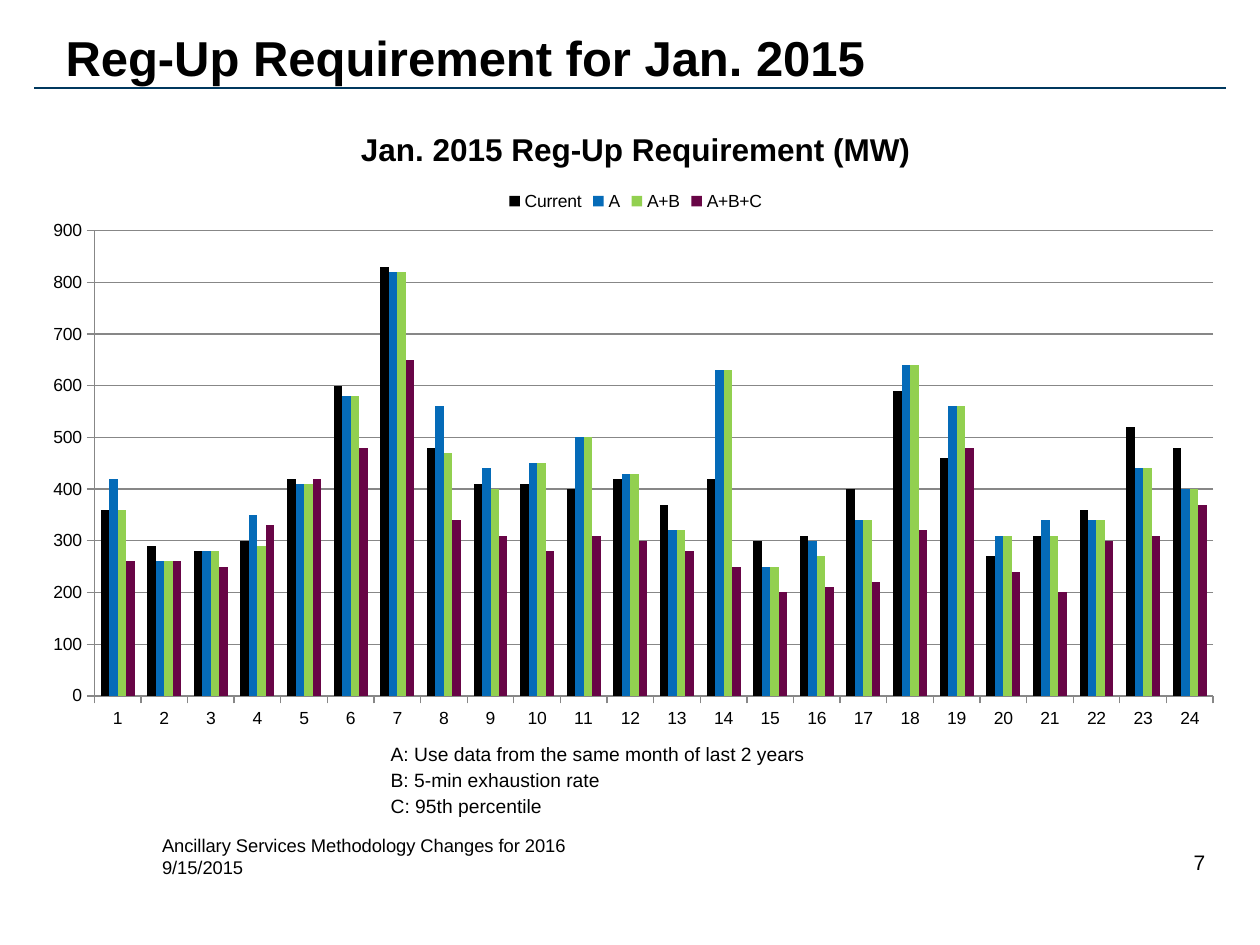
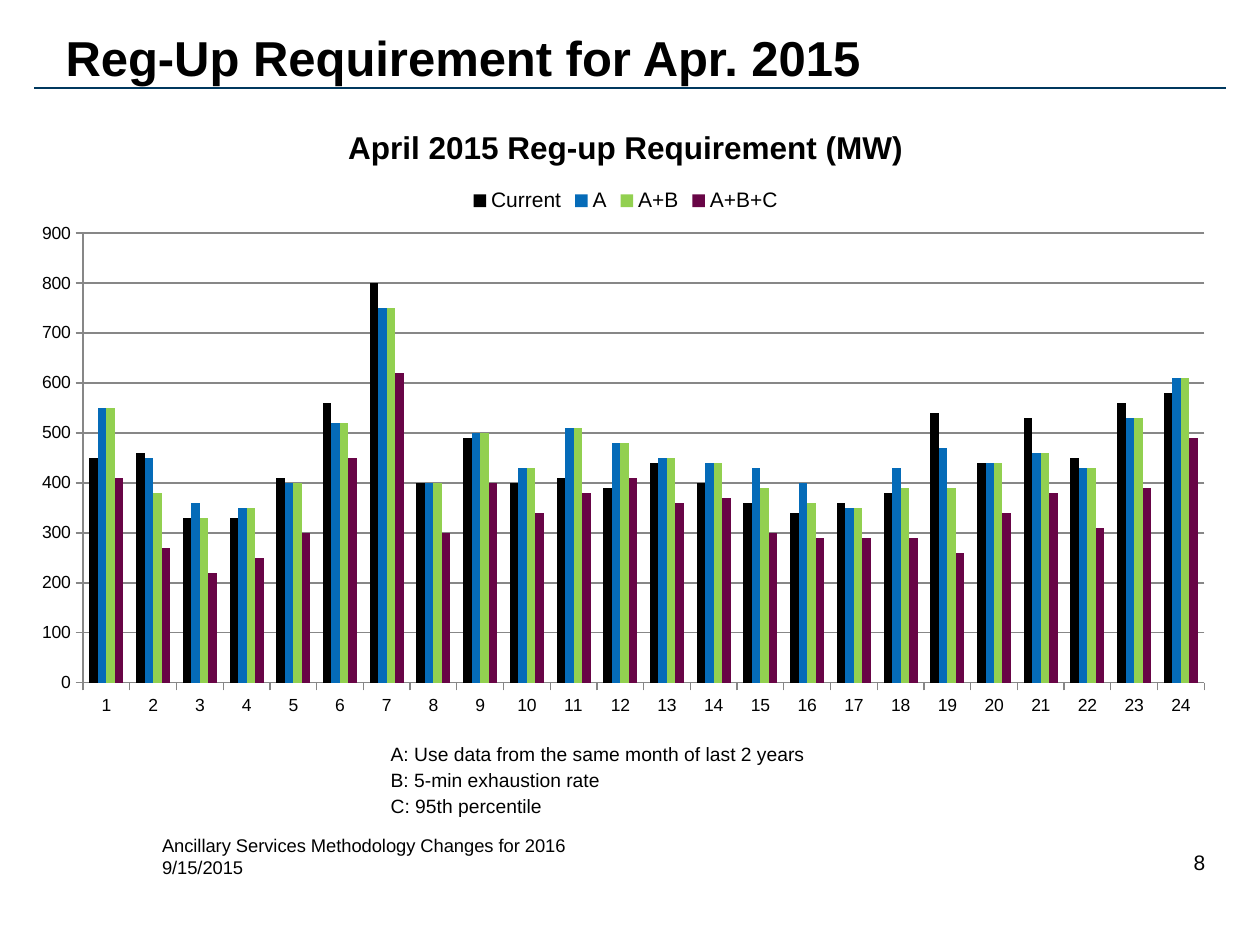
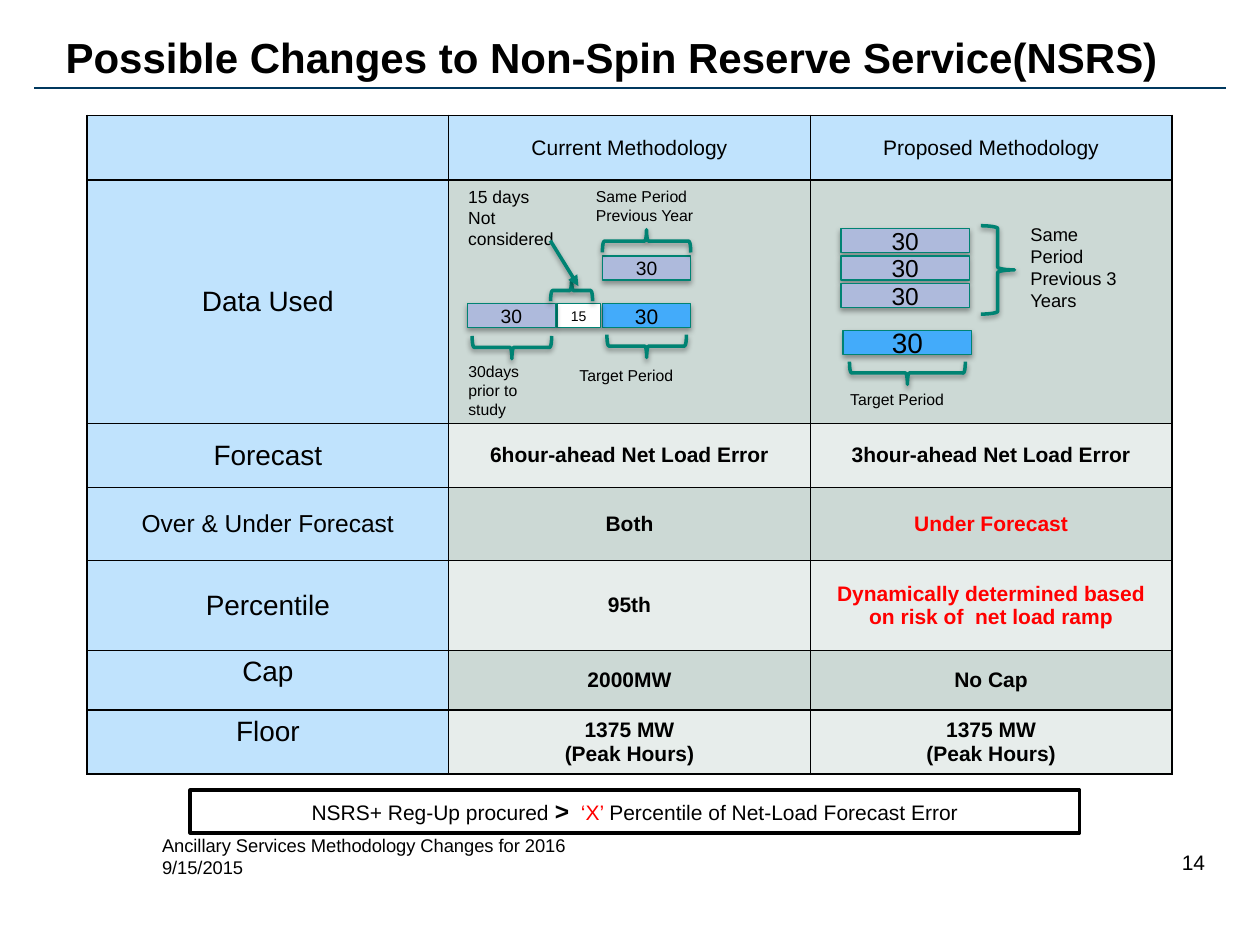
from typing import NamedTuple

from lxml.etree import SubElement
from pptx import Presentation
from pptx.chart.data import CategoryChartData
from pptx.dml.color import RGBColor
from pptx.enum.chart import XL_CHART_TYPE as ChartType
from pptx.enum.chart import XL_LEGEND_POSITION as LegendPosition
from pptx.enum.chart import XL_TICK_MARK as TickMark
from pptx.enum.shapes import MSO_CONNECTOR as Connector
from pptx.enum.shapes import MSO_SHAPE as Preset
from pptx.enum.text import MSO_ANCHOR as Anchor
from pptx.enum.text import MSO_AUTO_SIZE as AutoSize
from pptx.enum.text import PP_ALIGN as Align
from pptx.oxml.ns import qn
from pptx.util import Pt

FONT = "Arial"
COLORS = {
    "ink": "000000",
    "paper": "FFFFFF",
    "rule": "00385E",
    "alert": "FF0000",
    "heading": "C0E3FD",
    "band_dark": "CCD9D5",
    "band_light": "E7EDEB",
    "history": "AEBADC",
    "target": "43ABFA",
    "diagram": "008373",
    "grid": "878787",
    "Current": "000000",
    "A": "056BB8",
    "A+B": "92D050",
    "A+B+C": "680546",
}
FOOTER = "Ancillary Services Methodology Changes for 2016\n9/15/2015"
LEGEND_NOTES = (
    "A: Use data from the same month of last 2 years",
    "B: 5-min exhaustion rate",
    "C: 95th percentile",
)
NOTE_HEIGHT = 14.88


class Box(NamedTuple):
    left: float
    top: float
    width: float
    height: float

    def points(self) -> tuple:
        return tuple(Pt(length) for length in self)


class RequirementSlide(NamedTuple):
    title: str
    number: int
    chart_title: str
    chart_box: Box
    plot: tuple[float, float, float, float]
    legend_size: float
    series: dict[str, list[int]]


class MethodRow(NamedTuple):
    height: float
    label: str
    current: str
    proposed: str
    fill: str
    label_size: float = 16
    label_anchor: Anchor = Anchor.MIDDLE
    proposed_color: str = "ink"
    bold: bool = True


class Caption(NamedTuple):
    text: str
    box: Box
    size: float = 9


class Period(NamedTuple):
    days: str
    box: Box
    fill: str
    size: float


class Brace(NamedTuple):
    box: Box
    rotation: int


REQUIREMENTS = [
    RequirementSlide(
        "Reg-Up Requirement for Jan. 2015", 7, "Jan. 2015 Reg-Up Requirement (MW)",
        Box(19.5, 59, 687.5, 364.25), (0.05, 0.2, 0.93, 0.73), 10,
        {
            "Current": [360, 290, 280, 300, 420, 600, 830, 480, 410, 410, 400, 420,
                        370, 420, 300, 310, 400, 590, 460, 270, 310, 360, 520, 480],
            "A": [420, 260, 280, 350, 410, 580, 820, 560, 440, 450, 500, 430,
                  320, 630, 250, 300, 340, 640, 560, 310, 340, 340, 440, 400],
            "A+B": [360, 260, 280, 290, 410, 580, 820, 470, 400, 450, 500, 430,
                    320, 630, 250, 270, 340, 640, 560, 310, 310, 340, 440, 400],
            "A+B+C": [260, 260, 250, 330, 420, 480, 650, 340, 310, 280, 310, 300,
                      280, 250, 200, 210, 220, 320, 480, 240, 200, 300, 310, 370],
        },
    ),
    RequirementSlide(
        "Reg-Up Requirement for Apr. 2015", 8, "April 2015 Reg-up Requirement (MW)",
        Box(13, 58.25, 689, 357), (0.05, 0.21, 0.93, 0.72), 12,
        {
            "Current": [450, 460, 330, 330, 410, 560, 800, 400, 490, 400, 410, 390,
                        440, 400, 360, 340, 360, 380, 540, 440, 530, 450, 560, 580],
            "A": [550, 450, 360, 350, 400, 520, 750, 400, 500, 430, 510, 480,
                  450, 440, 430, 400, 350, 430, 470, 440, 460, 430, 530, 610],
            "A+B": [550, 380, 330, 350, 400, 520, 750, 400, 500, 430, 510, 480,
                    450, 440, 390, 360, 350, 390, 390, 440, 460, 430, 530, 610],
            "A+B+C": [410, 270, 220, 250, 300, 450, 620, 300, 400, 340, 380, 410,
                      360, 370, 300, 290, 290, 290, 260, 340, 380, 310, 390, 490],
        },
    ),
]

METHOD_ROWS = [
    MethodRow(37, "", "Current Methodology", "Proposed Methodology", "heading", bold=False),
    MethodRow(139, "Data Used", "", "", "band_dark"),
    MethodRow(36.75, "Forecast", "6hour-ahead Net Load Error",
              "3hour-ahead Net Load Error", "band_light"),
    MethodRow(41.75, "Over & Under Forecast", "Both", "Under Forecast", "band_dark",
              label_size=14, proposed_color="alert"),
    MethodRow(51.25, "Percentile", "95th",
              "Dynamically determined based on risk of  net load ramp", "band_light",
              proposed_color="alert"),
    MethodRow(34, "Cap", "2000MW", "No Cap", "band_dark", label_anchor=Anchor.TOP),
    MethodRow(36.75, "Floor", "1375 MW\n(Peak Hours)", "1375 MW\n(Peak Hours)",
              "band_light", label_anchor=Anchor.TOP),
]

CAPTIONS = [
    Caption("Target Period", Box(324, 205.25, 81.5, 18)),
    Caption("Same Period\nPrevious Year", Box(333.5, 103, 72, 29)),
    Caption("15 days\nNot considered", Box(260.5, 103, 80, 44), 10),
    Caption("30days prior to study", Box(260.5, 203, 59, 40)),
    Caption("Target Period", Box(478.75, 219, 81.5, 18)),
    Caption("Same Period\nPrevious 3 Years", Box(581.75, 124, 71, 58), 10.5),
]

CURRENT_PERIODS = [
    Period("30", Box(344.25, 146.25, 50.5, 13.75), "history", 11),
    Period("30", Box(344.25, 173.5, 50.5, 13.75), "target", 12),
    Period("15", Box(318.25, 173.5, 25, 13.75), "paper", 8),
    Period("30", Box(267, 173.5, 50.5, 13.75), "history", 11),
]
CURRENT_BRACES = [
    Brace(Box(363, 175, 13, 45.5), 90),
    Brace(Box(363, 112.5, 13, 50.5), 270),
    Brace(Box(286, 175.75, 13, 45.5), 90),
    Brace(Box(320.5, 154, 12.25, 24), 270),
]
PROPOSED_PERIODS = [Period("30", Box(481.75, 189, 73.5, 13.75), "target", 16)] + [
    Period("30", Box(480.5, 130.5 + 15.75 * year, 73.5, 13.75), "history", 14)
    for year in range(3)
]
PROPOSED_BRACES = [
    Brace(Box(512, 180, 13, 66.25), 90),
    Brace(Box(560.5, 129, 19.25, 50.5), 0),
]


def color(name: str) -> RGBColor:
    return RGBColor.from_string(COLORS[name])


def style(font, size: float, ink: str = "ink", bold: bool = False) -> None:
    font.name = FONT
    font.size = Pt(size)
    font.bold = bold
    font.color.rgb = color(ink)


def write(frame, text: str, size: float, ink: str = "ink", bold: bool = False,
          align: Align = Align.LEFT) -> None:
    frame.text = text
    for paragraph in frame.paragraphs:
        paragraph.alignment = align
        style(paragraph.font, size, ink, bold)


def add_text(slide, text: str, box: Box, size: float, align: Align = Align.LEFT,
             anchor: Anchor = Anchor.TOP) -> None:
    frame = slide.shapes.add_textbox(*box.points()).text_frame
    frame.word_wrap = True
    frame.vertical_anchor = anchor
    write(frame, text, size, align=align)


def set_line(shape, name: str, width: float) -> None:
    shape.line.color.rgb = color(name)
    shape.line.width = Pt(width)


def add_line(shapes, start: tuple, end: tuple, name: str, width: float):
    line = shapes.add_connector(Connector.STRAIGHT, *(Pt(n) for n in start + end))
    set_line(line, name, width)
    SubElement(line._element.spPr, qn("a:effectLst"))
    return line


def cast_shadow(shape, opacity: int, distance: float) -> None:
    effects = shape._element.spPr.find(qn("a:effectLst"))
    shadow = SubElement(effects, qn("a:outerShdw"), blurRad=str(Pt(3.1)),
                        dist=str(Pt(distance)), dir="5400000", rotWithShape="0")
    shade = SubElement(shadow, qn("a:srgbClr"), val=COLORS["ink"])
    SubElement(shade, qn("a:alpha"), val=str(opacity * 1000))


def start_slide(deck, title: str, title_size: float, number: int):
    slide = deck.slides.add_slide(deck.slide_layouts[5])
    heading = slide.shapes.title
    heading.left, heading.top, heading.width, heading.height = Box(30.25, 14.5, 666, 36).points()
    frame = heading.text_frame
    frame.word_wrap = True
    frame.auto_size = AutoSize.NONE
    frame.vertical_anchor = Anchor.MIDDLE
    write(frame, title, title_size, bold=True)
    add_text(slide, FOOTER, Box(85.5, 473, 541, 32.5), 10.5)
    add_line(slide.shapes, (19.5, 50.25), (700.5, 50.25), "rule", 1.25)
    add_text(slide, str(number), Box(528, 478, 167.75, 29), 12, Align.RIGHT, Anchor.MIDDLE)
    return slide


def add_plain_table(slide, rows: int, columns: int, box: Box):
    table = slide.shapes.add_table(rows, columns, *box.points()).table
    table.first_row = False
    table.horz_banding = False
    return table


def add_borders(cell, name: str) -> None:
    for side in ("a:lnL", "a:lnR", "a:lnT", "a:lnB"):
        border = SubElement(cell._tc.get_or_add_tcPr(), qn(side), w=str(Pt(1)))
        SubElement(SubElement(border, qn("a:solidFill")), qn("a:srgbClr"), val=COLORS[name])


def add_legend_notes(slide) -> None:
    box = Box(222.5, 422.75, 275, NOTE_HEIGHT * len(LEGEND_NOTES))
    table = add_plain_table(slide, len(LEGEND_NOTES), 1, box)
    for row, note in enumerate(LEGEND_NOTES):
        cell = table.cell(row, 0)
        cell.margin_left = cell.margin_right = cell.margin_top = Pt(0.75)
        cell.margin_bottom = Pt(0)
        cell.vertical_anchor = Anchor.BOTTOM
        add_borders(cell, "paper")
        cell.fill.background()
        write(cell.text_frame, note, 11)


def place_plot(chart, plot: tuple) -> None:
    area = chart._chartSpace.chart.plotArea
    layout = area.find(qn("c:layout"))
    if layout is None:
        layout = SubElement(area, qn("c:layout"))
        area.insert(0, layout)
    manual = SubElement(layout, qn("c:manualLayout"))
    settings = [("layoutTarget", "inner"), ("xMode", "edge"), ("yMode", "edge")]
    for tag, value in settings + list(zip("xywh", plot)):
        SubElement(manual, qn(f"c:{tag}"), val=str(value))


def add_requirement_chart(slide, content: RequirementSlide) -> None:
    data = CategoryChartData()
    data.categories = [str(hour) for hour in range(1, 25)]
    for name, values in content.series.items():
        data.add_series(name, values)
    chart = slide.shapes.add_chart(ChartType.COLUMN_CLUSTERED,
                                   *content.chart_box.points(), data).chart
    style(chart.font, 10)
    chart.has_title = True
    write(chart.chart_title.text_frame, content.chart_title, 18, bold=True, align=Align.CENTER)
    chart.has_legend = True
    chart.legend.position = LegendPosition.TOP
    chart.legend.include_in_layout = False
    style(chart.legend.font, content.legend_size)
    columns = chart.plots[0]
    columns.gap_width = 150
    columns.overlap = 0
    columns.vary_by_categories = False
    for series in columns.series:
        series.format.fill.solid()
        series.format.fill.fore_color.rgb = color(series.name)
    hours, megawatts = chart.category_axis, chart.value_axis
    megawatts.minimum_scale, megawatts.maximum_scale = 0, 900
    megawatts.major_unit = 100
    megawatts.has_major_gridlines = True
    for axis in (hours, megawatts):
        axis.major_tick_mark = TickMark.OUTSIDE
        axis.minor_tick_mark = TickMark.NONE
    for ruled in (hours, megawatts, megawatts.major_gridlines):
        set_line_format = ruled.format.line
        set_line_format.color.rgb = color("grid")
        set_line_format.width = Pt(0.75)
    place_plot(chart, content.plot)


def add_method_table(slide) -> None:
    height = sum(row.height for row in METHOD_ROWS)
    table = add_plain_table(slide, len(METHOD_ROWS), 3, Box(49.75, 66, 620, height))
    for index, row in enumerate(METHOD_ROWS):
        table.rows[index].height = Pt(row.height)
        entries = [
            (row.label, row.label_size, "ink", False, row.label_anchor, "heading"),
            (row.current, 12, "ink", row.bold, Anchor.MIDDLE, row.fill),
            (row.proposed, 12, row.proposed_color, row.bold, Anchor.MIDDLE, row.fill),
        ]
        for column, (text, size, ink, bold, anchor, fill) in enumerate(entries):
            cell = table.cell(index, column)
            add_borders(cell, "ink")
            cell.fill.solid()
            cell.fill.fore_color.rgb = color(fill)
            cell.vertical_anchor = anchor
            write(cell.text_frame, text, size, ink, bold, Align.CENTER)


def add_rectangle(shapes, box: Box, fill: str, line: str, width: float):
    rectangle = shapes.add_shape(Preset.RECTANGLE, *box.points())
    rectangle.shadow.inherit = False
    rectangle.fill.solid()
    rectangle.fill.fore_color.rgb = color(fill)
    set_line(rectangle, line, width)
    rectangle.text_frame.word_wrap = True
    return rectangle


def add_period(shapes, period: Period) -> None:
    bar = add_rectangle(shapes, period.box, period.fill, "diagram", 0.75)
    cast_shadow(bar, 35, 1.8)
    frame = bar.text_frame
    frame.margin_left = frame.margin_right = frame.margin_top = frame.margin_bottom = 0
    frame.vertical_anchor = Anchor.MIDDLE
    write(frame, period.days, period.size, align=Align.CENTER)


def add_brace(shapes, brace: Brace) -> None:
    shape = shapes.add_shape(Preset.RIGHT_BRACE, *brace.box.points())
    shape.rotation = brace.rotation
    shape.shadow.inherit = False
    shape.fill.background()
    set_line(shape, "diagram", 2)
    cast_shadow(shape, 38, 1.6)


def add_diagram(slide, periods: list[Period], braces: list[Brace]):
    shapes = slide.shapes.add_group_shape().shapes
    for period in periods:
        add_period(shapes, period)
    for brace in braces:
        add_brace(shapes, brace)
    return shapes


def add_rule_box(slide) -> None:
    box = add_rectangle(slide.shapes, Box(108.75, 451.5, 508.25, 24.5), "paper", "ink", 2)
    box.text_frame.vertical_anchor = Anchor.TOP
    paragraph = box.text_frame.paragraphs[0]
    paragraph.alignment = Align.CENTER
    for text, size, ink, bold in (
        ("NSRS+ Reg-Up procured ", 12, "ink", False),
        (">", 14, "ink", True),
        ("  ‘X’ ", 12, "alert", False),
        ("Percentile of Net-Load Forecast Error", 12, "ink", False),
    ):
        run = paragraph.add_run()
        run.text = text
        style(run.font, size, ink, bold)


def add_requirement_slide(deck, content: RequirementSlide) -> None:
    slide = start_slide(deck, content.title, 28, content.number)
    add_legend_notes(slide)
    add_requirement_chart(slide, content)


def add_method_slide(deck) -> None:
    slide = start_slide(deck, "Possible Changes to Non-Spin Reserve Service(NSRS)", 24, 14)
    add_method_table(slide)
    for caption in CAPTIONS:
        add_text(slide, caption.text, caption.box, caption.size)
    current = add_diagram(slide, CURRENT_PERIODS, CURRENT_BRACES)
    arrow = add_line(current, (314.5, 137.5), (330.5, 163.5), "diagram", 2)
    SubElement(arrow.get_or_add_ln(), qn("a:tailEnd"), type="triangle")
    cast_shadow(arrow, 38, 1.6)
    add_diagram(slide, PROPOSED_PERIODS, PROPOSED_BRACES)
    add_rule_box(slide)


def main() -> None:
    deck = Presentation()
    deck.slide_width, deck.slide_height = Pt(720), Pt(540)
    for content in REQUIREMENTS:
        add_requirement_slide(deck, content)
    add_method_slide(deck)
    deck.save("out.pptx")


if __name__ == "__main__":
    main()
